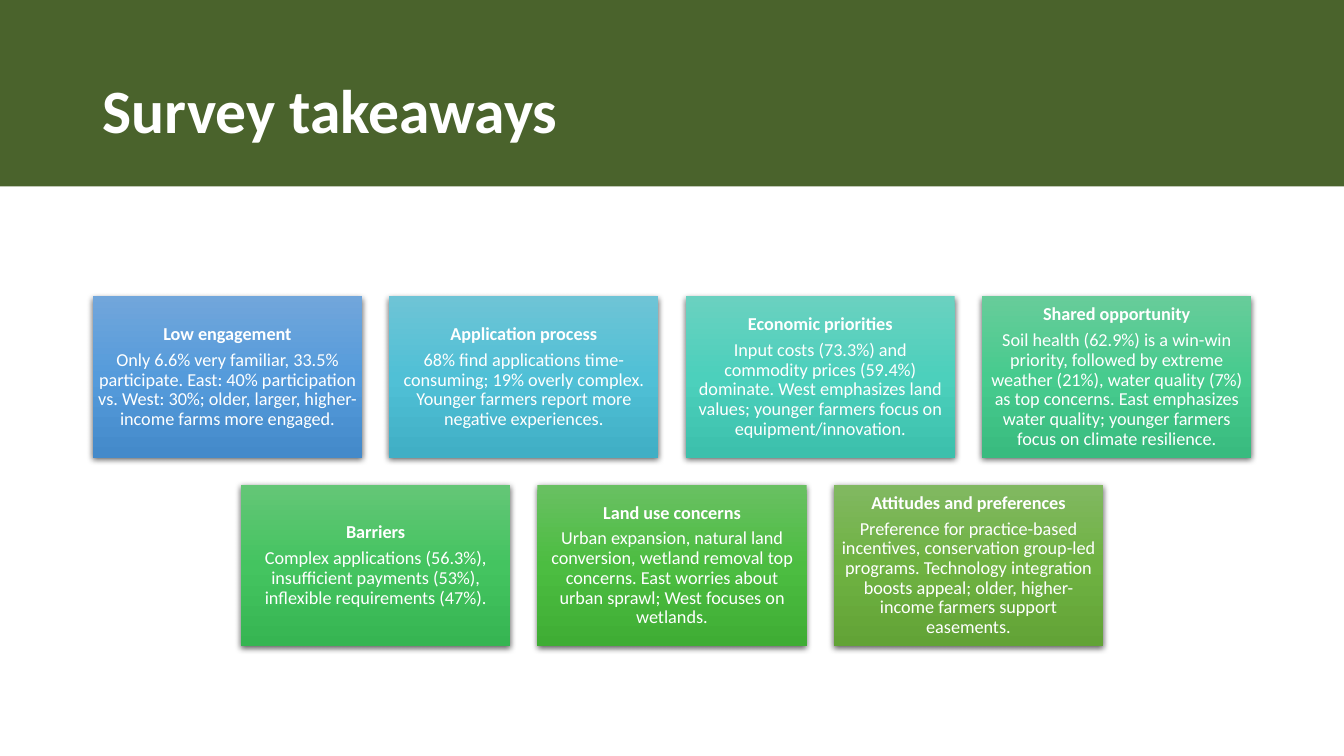
"""Build the survey takeaways slide with two centred rows of gradient cards."""
import copy
import dataclasses

import lxml.etree
import pptx
import pptx.dml.color
import pptx.enum.shapes
import pptx.enum.text
import pptx.oxml.ns
import pptx.shapes.autoshape
import pptx.slide
import pptx.text.text
import pptx.util

WIDTH, HEIGHT = 13.33, 7.5
CARD_WIDTH, CARD_HEIGHT = 2.67, 1.6
COLUMN_PITCH, ROW_PITCH = 2.94, 1.87
FIRST_ROW_TOP = 2.94
BAND_HEIGHT = 1.85
TITLE_LEFT, TITLE_TOP, TITLE_WIDTH = 0.92, 0.4, 11.5

COLORS = {"band": "4A632C", "text": "FFFFFF", "shadow": "000000"}


@dataclasses.dataclass
class Card:
    heading: str
    body: str
    gradient: tuple[str, str, str]


CARD_ROWS = [
    [
        Card("Low engagement",
             "Only 6.6% very familiar, 33.5% participate. East: 40% participation vs. "
             "West: 30%; older, larger, higher-income farms more engaged.",
             ("71A6DB", "559BDB", "448ACA")),
        Card("Application process",
             "68% find applications time-consuming; 19% overly complex. Younger farmers "
             "report more negative experiences.",
             ("6EC4D6", "50C0D6", "40AFC5")),
        Card("Economic priorities",
             "Input costs (73.3%) and commodity prices (59.4%) dominate. West emphasizes "
             "land values; younger farmers focus on equipment/innovation.",
             ("6AD1C0", "4CD0BC", "3CC0AC")),
        Card("Shared opportunity",
             "Soil health (62.9%) is a win-win priority, followed by extreme weather (21%), "
             "water quality (7%) as top concerns. East emphasizes water quality; younger "
             "farmers focus on climate resilience.",
             ("67CC9A", "47CB8E", "39BB7F")),
    ],
    [
        Card("Barriers",
             "Complex applications (56.3%), insufficient payments (53%), inflexible "
             "requirements (47%).",
             ("64C677", "44C460", "36B552")),
        Card("Land use concerns",
             "Urban expansion, natural land conversion, wetland removal top concerns. East "
             "worries about urban sprawl; West focuses on wetlands.",
             ("69C062", "4CBD41", "3FAD34")),
        Card("Attitudes and preferences",
             "Preference for practice-based incentives, conservation group-led programs. "
             "Technology integration boosts appeal; older, higher-income farmers support "
             "easements.",
             ("81B861", "6FB242", "62A336")),
    ],
]


def color(value: str) -> pptx.dml.color.RGBColor:
    return pptx.dml.color.RGBColor.from_string(value)


def write(para: pptx.text.text._Paragraph, text: str, *, size: float, bold: bool = False,
          align: pptx.enum.text.PP_ALIGN = pptx.enum.text.PP_ALIGN.CENTER,
          space_after: float = 0) -> None:
    para.alignment = align
    para.line_spacing = 0.9
    para.space_after = pptx.util.Pt(space_after)
    span = para.add_run()
    span.text = text
    span.font.name = "Calibri"
    span.font.size = pptx.util.Pt(size)
    span.font.bold = bold
    span.font.color.rgb = color(COLORS["text"])


def add_rectangle(page: pptx.slide.Slide, left: float, top: float, width: float,
                  height: float) -> pptx.shapes.autoshape.Shape:
    box = page.shapes.add_shape(pptx.enum.shapes.MSO_SHAPE.RECTANGLE,
                                *map(pptx.util.Inches, (left, top, width, height)))
    box.line.fill.background()
    box.shadow.inherit = False
    return box


def fill_gradient(box: pptx.shapes.autoshape.Shape, shades: tuple[str, str, str]) -> None:
    box.fill.gradient()
    box.fill.gradient_angle = 270
    first = box.element.spPr.find(".//" + pptx.oxml.ns.qn("a:gs"))
    first.addnext(copy.deepcopy(first))
    for index, (stop, shade) in enumerate(zip(box.fill.gradient_stops, shades)):
        stop.position = index / 2
        stop.color.rgb = color(shade)


def add_shadow(box: pptx.shapes.autoshape.Shape) -> None:
    name = pptx.oxml.ns.qn
    effects = box.element.spPr.find(name("a:effectLst"))
    shadow = lxml.etree.SubElement(effects, name("a:outerShdw"),
                                   blurRad=str(pptx.util.Pt(4.5)), dist=str(pptx.util.Pt(1.5)),
                                   dir="5400000", algn="ctr", rotWithShape="0")
    shade = lxml.etree.SubElement(shadow, name("a:srgbClr"), val=COLORS["shadow"])
    lxml.etree.SubElement(shade, name("a:alpha"), val="63000")


def add_card(page: pptx.slide.Slide, card: Card, left: float, top: float) -> None:
    box = add_rectangle(page, left, top, CARD_WIDTH, CARD_HEIGHT)
    fill_gradient(box, card.gradient)
    add_shadow(box)
    frame = box.text_frame
    frame.word_wrap = True
    frame.vertical_anchor = pptx.enum.text.MSO_ANCHOR.MIDDLE
    inset = pptx.util.Inches(0.05)
    frame.margin_left = frame.margin_right = frame.margin_top = frame.margin_bottom = inset
    write(frame.paragraphs[0], card.heading, size=13, bold=True, space_after=4.5)
    write(frame.add_paragraph(), card.body, size=13, space_after=4.5)


def add_header(page: pptx.slide.Slide) -> None:
    band = add_rectangle(page, 0, 0, WIDTH, BAND_HEIGHT)
    band.fill.solid()
    band.fill.fore_color.rgb = color(COLORS["band"])
    title = page.shapes.title
    band.element.addnext(title.element)
    title.left, title.top = pptx.util.Inches(TITLE_LEFT), pptx.util.Inches(TITLE_TOP)
    title.width = pptx.util.Inches(TITLE_WIDTH)
    title.height = pptx.util.Inches(BAND_HEIGHT - TITLE_TOP)
    title.text_frame.vertical_anchor = pptx.enum.text.MSO_ANCHOR.MIDDLE
    write(title.text_frame.paragraphs[0], "Survey takeaways", size=44, bold=True,
          align=pptx.enum.text.PP_ALIGN.LEFT)


def main() -> None:
    deck = pptx.Presentation()
    deck.slide_width = pptx.util.Inches(WIDTH)
    deck.slide_height = pptx.util.Inches(HEIGHT)
    page = deck.slides.add_slide(deck.slide_layouts.get_by_name("Title Only"))
    add_header(page)
    for row, cards in enumerate(CARD_ROWS):
        row_width = CARD_WIDTH + (len(cards) - 1) * COLUMN_PITCH
        row_left = (WIDTH - row_width) / 2
        for column, card in enumerate(cards):
            add_card(page, card, row_left + column * COLUMN_PITCH,
                     FIRST_ROW_TOP + row * ROW_PITCH)
    deck.save("out.pptx")


if __name__ == "__main__":
    main()
